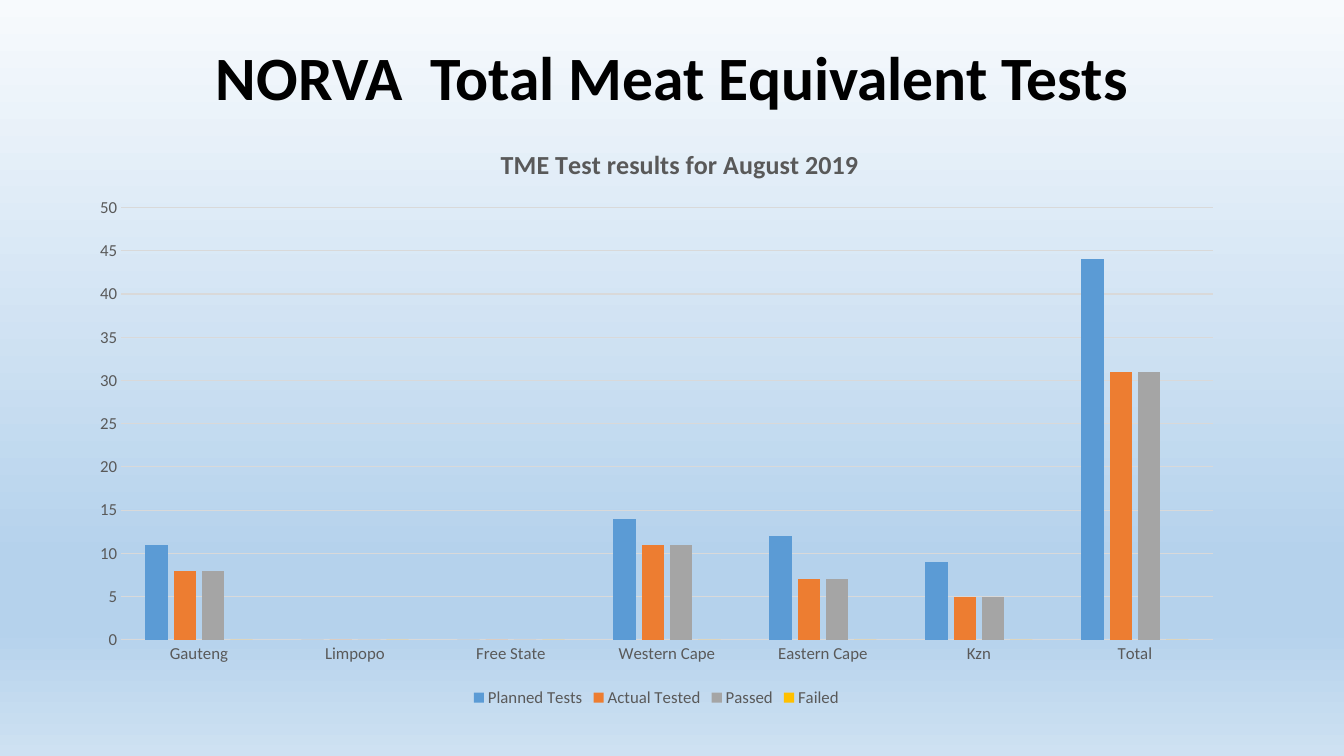
from lxml import etree
from pptx import Presentation
from pptx.chart.data import CategoryChartData
from pptx.dml.color import RGBColor
from pptx.enum.chart import XL_CHART_TYPE, XL_LEGEND_POSITION, XL_TICK_MARK
from pptx.enum.text import MSO_ANCHOR, PP_ALIGN
from pptx.oxml import parse_xml
from pptx.oxml.ns import nsdecls, qn
from pptx.util import Inches, Pt

CLUSTERED = XL_CHART_TYPE.COLUMN_CLUSTERED
BOTTOM = XL_LEGEND_POSITION.BOTTOM
NO_TICK = XL_TICK_MARK.NONE
MIDDLE = MSO_ANCHOR.MIDDLE
CENTER = PP_ALIGN.CENTER

FONT = "Calibri"
COLORS = {
    "title": "000000", "label": "595959", "grid": "D9D9D9",
    "planned": "5B9BD5", "tested": "ED7D31", "passed": "A5A5A5", "failed": "FFC000",
}
BACKGROUND_STOPS = [(0, "F7FAFD"), (74, "B5D2EC"), (83, "B5D2EC"), (100, "CEE1F2")]
TITLE = "NORVA  Total Meat Equivalent Tests"
CHART_TITLE = "TME Test results for August 2019"
REGIONS = ["Gauteng", "Limpopo", "Free State", "Western Cape", "Eastern Cape", "Kzn", "Total"]
SERIES = [
    ("Planned Tests", [11, 0, 0, 14, 12, 9, 44], "planned"),
    ("Actual Tested", [8, 0, 0, 11, 7, 5, 31], "tested"),
    ("Passed", [8, 0, 0, 11, 7, 5, 31], "passed"),
    ("Failed", [0, 0, 0, 0, 0, 0, 0], "failed"),
]
TITLE_BOX = (0.92, 0.4, 11.5, 0.8)
CHART_BOX = (0.76, 1.26, 11.5, 5.8)
PLOT_BOX = (1.2, 2.06, 10.83, 4.29)
CHART_TITLE_CORNER = (4.92, 1.4)


def color(name):
    return RGBColor.from_string(COLORS[name])


def style_font(font, size, name, bold=False):
    font.name = FONT
    font.size = Pt(size)
    font.bold = bold
    font.color.rgb = color(name)


def paint_background(slide):
    slide.background.fill.gradient()
    gradient = slide.element.find(".//" + qn("a:gradFill"))
    for child in list(gradient):
        gradient.remove(child)
    stops = etree.SubElement(gradient, qn("a:gsLst"))
    for position, value in BACKGROUND_STOPS:
        stop = etree.SubElement(stops, qn("a:gs"), pos=str(position * 1000))
        etree.SubElement(stop, qn("a:srgbClr"), val=value)
    etree.SubElement(gradient, qn("a:lin"), ang="5400000", scaled="0")


def add_title(slide):
    frame = slide.shapes.add_textbox(*map(Inches, TITLE_BOX)).text_frame
    frame.word_wrap = True
    frame.vertical_anchor = MIDDLE
    paragraph = frame.paragraphs[0]
    paragraph.alignment = CENTER
    paragraph.line_spacing = 0.9
    run = paragraph.add_run()
    run.text = TITLE
    style_font(run.font, 44, "title", True)


def place_in_chart(element, index, box, target=""):
    left, top, width, height = CHART_BOX
    offsets = (left, top, 0, 0)
    extents = (width, height, width, height)
    values = "".join(
        f'<c:{key} val="{(length - offset) / extent:.4f}"/>'
        for key, length, offset, extent in zip("xywh", box, offsets, extents)
    )
    layout = parse_xml(
        f'<c:layout {nsdecls("c")}><c:manualLayout>{target}'
        f'<c:xMode val="edge"/><c:yMode val="edge"/>{values}</c:manualLayout></c:layout>'
    )
    for existing in element.findall(qn("c:layout")):
        element.remove(existing)
    element.insert(index, layout)


def add_results_chart(slide):
    data = CategoryChartData()
    data.categories = REGIONS
    for name, values, _ in SERIES:
        data.add_series(name, values)
    chart = slide.shapes.add_chart(CLUSTERED, *map(Inches, CHART_BOX), data).chart
    style_font(chart.font, 10, "title")

    chart.has_title = True
    run = chart.chart_title.text_frame.paragraphs[0].add_run()
    run.text = CHART_TITLE
    style_font(run.font, 18.6, "label", True)
    chart.chart_title.include_in_layout = False

    chart.has_legend = True
    chart.legend.position = BOTTOM
    chart.legend.include_in_layout = False
    style_font(chart.legend.font, 12, "label")

    plot = chart.plots[0]
    plot.gap_width = 219
    plot.overlap = -27
    plot.vary_by_categories = False
    for series, (_, _, color_name) in zip(plot.series, SERIES):
        series.format.fill.solid()
        series.format.fill.fore_color.rgb = color(color_name)

    for axis in (chart.category_axis, chart.value_axis):
        axis.major_tick_mark = NO_TICK
        axis.minor_tick_mark = NO_TICK
        style_font(axis.tick_labels.font, 12, "label")
    value_axis = chart.value_axis
    value_axis.minimum_scale, value_axis.maximum_scale, value_axis.major_unit = 0, 50, 5
    value_axis.format.line.fill.background()
    value_axis.has_major_gridlines = True
    for line in (chart.category_axis.format.line, value_axis.major_gridlines.format.line):
        line.width = Pt(0.75)
        line.color.rgb = color("grid")

    chart_space = chart._chartSpace
    plot_area = chart_space.find(".//" + qn("c:plotArea"))
    place_in_chart(plot_area, 0, PLOT_BOX, '<c:layoutTarget val="inner"/>')
    title = chart_space.find(".//" + qn("c:title"))
    place_in_chart(title, 1, CHART_TITLE_CORNER)


def main():
    """Build the slide of meat equivalent test results."""
    presentation = Presentation()
    presentation.slide_width = Inches(13.33)
    presentation.slide_height = Inches(7.5)
    slide = presentation.slides.add_slide(presentation.slide_layouts[6])
    paint_background(slide)
    add_title(slide)
    add_results_chart(slide)
    presentation.save("out.pptx")


if __name__ == "__main__":
    main()
